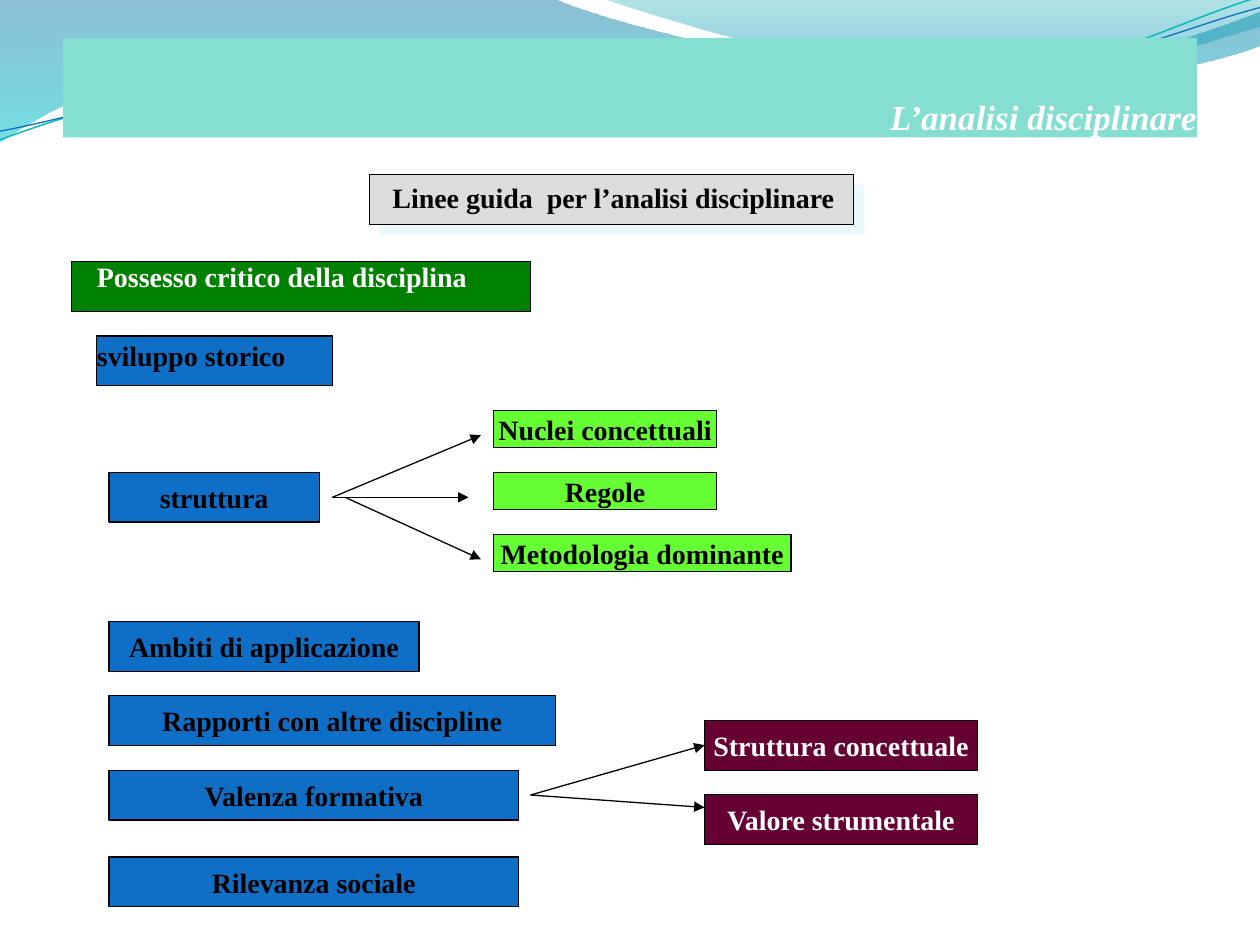
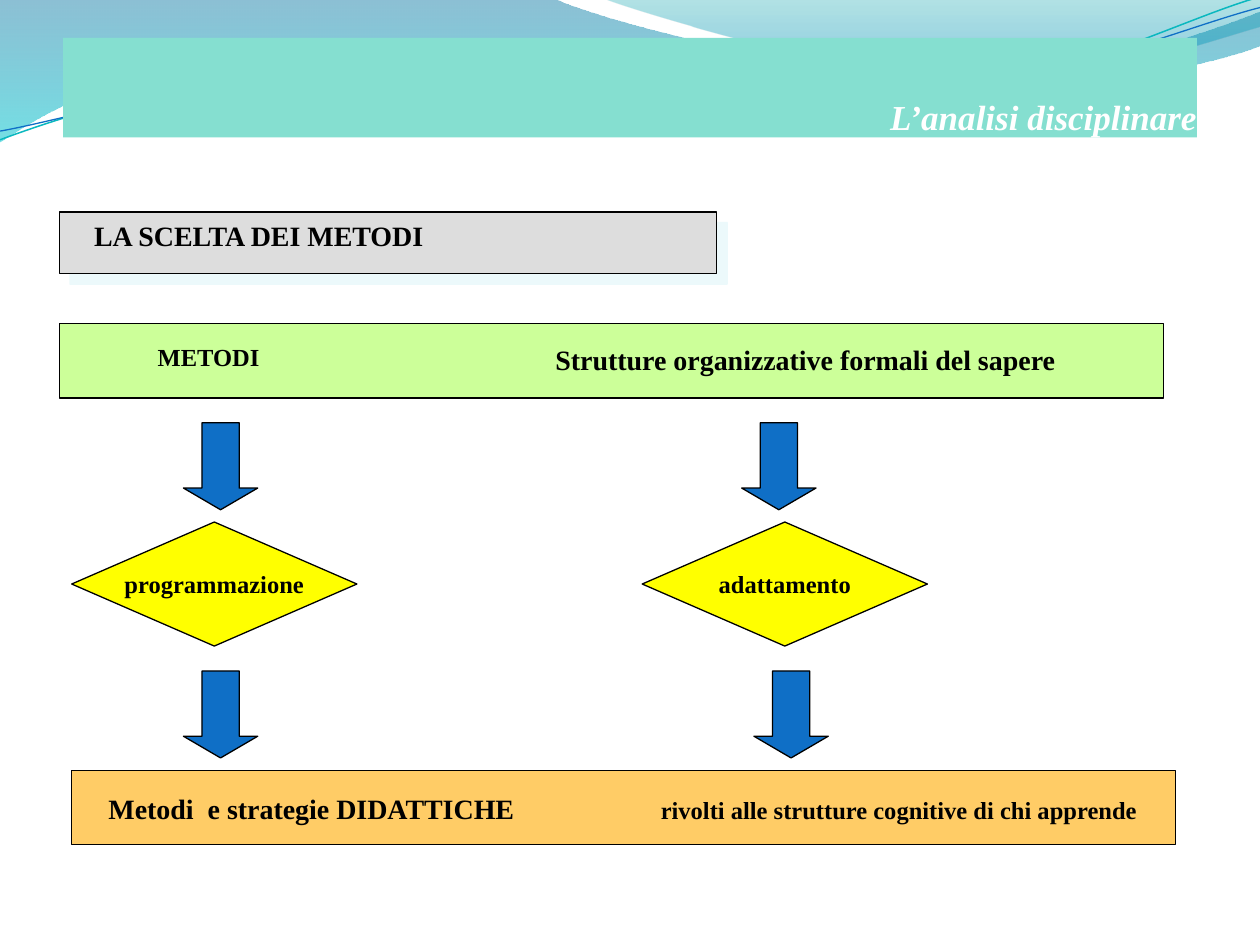
from pptx import Presentation
from pptx.dml.color import RGBColor
from pptx.enum.shapes import MSO_CONNECTOR, MSO_SHAPE
from pptx.enum.text import MSO_ANCHOR, MSO_AUTO_SIZE, PP_ALIGN
from pptx.oxml import parse_xml
from pptx.oxml.ns import nsdecls, qn
from pptx.util import Pt

RECTANGLE = MSO_SHAPE.RECTANGLE
DOWN_ARROW = MSO_SHAPE.DOWN_ARROW
DECISION = MSO_SHAPE.FLOWCHART_DECISION
STRAIGHT = MSO_CONNECTOR.STRAIGHT
LEFT, CENTER, RIGHT = PP_ALIGN.LEFT, PP_ALIGN.CENTER, PP_ALIGN.RIGHT
TOP, MIDDLE, BOTTOM = MSO_ANCHOR.TOP, MSO_ANCHOR.MIDDLE, MSO_ANCHOR.BOTTOM

FONT = "Times New Roman"
BLACK, WHITE = "000000", "FFFFFF"
BLUE, GREEN, LIME, MAROON = "0F6FC6", "008000", "66FF33", "660033"
GRAY, PALE_GREEN, YELLOW, ORANGE = "DDDDDD", "CCFF99", "FFFF00", "FFCC66"
TEAL, TITLE_BAND, SHADOW = "0AB8BF", "85DFD0", "DBF5F9"

WAVE_BANDS = [
    ((0, 0), [
        (316.8, -0.7),
        (342.7, 12.2, 478.1, 45.4, 545.8, 45.4),
        (614.2, 45.4, 689.8, 18.7, 720, 6.5),
        (720.7, 25.9),
        (707.8, 31.7, 626.4, 54.7, 537.1, 54),
        (447.8, 54, 275, 20.2, 185, 24.5),
        (92.9, 25.9, 33.1, 59.8, -0.7, 81.4),
        (0, 0),
    ], [(0, "0074A1", 45), (100, "00C6CF", 55)]),
    ((344.9, -0.7), [
        (366.5, 7.9, 491, 44.6, 553.7, 46.8),
        (616.3, 49.7, 691.9, 23, 720, 15.1),
        (720, 0),
        (344.9, -0.7),
    ], [(0, "00A1A9", 30), (80, "008BBF", 45)]),
]
WAVE_LINES = [
    ((0, 79.9), [
        (34.6, 67, 113.8, 41, 199.4, 37.4),
        (284.4, 33.8, 427, 64.1, 513.4, 57.6),
        (599.8, 51.1, 675.4, 10.8, 718.6, -1.4),
    ], TEAL, 0.85),
    ((0, 74.9), [
        (33.8, 69.1, 118.1, 43.9, 203.8, 40.3),
        (290.2, 36.7, 429.8, 60.5, 516.2, 54),
        (601.9, 48.2, 677.5, 15.1, 720, 4.3),
    ], BLUE, 0.75),
]


def color(value):
    return RGBColor.from_string(value)


def bend(outline, segments):
    corners = iter(outline.findall(qn("a:lnTo")))
    for segment in segments:
        nodes = [next(corners) for _ in range(len(segment) // 2)]
        if len(nodes) == 3:
            curve = parse_xml(f"<a:cubicBezTo {nsdecls('a')}/>")
            nodes[0].addprevious(curve)
            for node in nodes:
                curve.append(node[0])
                outline.remove(node)


def write(para, text, size=16, ink=BLACK, italic=False, align=LEFT, before=0, indent=0):
    para.alignment = align
    para.space_before = Pt(before)
    properties = para._p.get_or_add_pPr()
    properties.set("marL", "0")
    properties.set("indent", str(Pt(indent)))
    properties.append(parse_xml(f"<a:buNone {nsdecls('a')}/>"))
    span = para.add_run()
    span.text = text
    span.font.name = FONT
    span.font.size = Pt(size)
    span.font.bold = True
    span.font.italic = italic
    span.font.color.rgb = color(ink)


class Slides:
    def __init__(self):
        self.deck = Presentation()
        self.deck.slide_width = Pt(720)
        self.deck.slide_height = Pt(540)
        self.page = None

    def add_page(self):
        self.page = self.deck.slides.add_slide(self.deck.slide_layouts[1])

    def wave(self, start, segments, closed):
        points = [
            (Pt(x), Pt(y))
            for segment in segments
            for x, y in zip(segment[::2], segment[1::2])
        ]
        builder = self.page.shapes.build_freeform(*map(Pt, start), scale=1.0)
        builder.add_line_segments(points, close=closed)
        shape = builder.convert_to_shape()
        bend(shape.element.spPr.find(".//" + qn("a:path")), segments)
        shape.shadow.inherit = False
        shape.fill.background()
        shape.line.fill.background()
        tree = self.deck.slide_master.shapes.element
        shape.element.nvSpPr.cNvPr.id = 100 + len(tree)
        tree.append(shape.element)
        return shape

    def wave_band(self, start, segments, stops):
        properties = self.wave(start, segments, True).element.spPr
        marks = "".join(
            f'<a:gs pos="{position * 1000}"><a:srgbClr val="{value}">'
            f'<a:alpha val="{alpha * 1000}"/></a:srgbClr></a:gs>'
            for position, value, alpha in stops
        )
        properties.replace(properties.find(qn("a:noFill")), parse_xml(
            f"<a:gradFill {nsdecls('a')}><a:gsLst>{marks}</a:gsLst>"
            '<a:lin ang="5400000" scaled="0"/></a:gradFill>'
        ))

    def wave_line(self, start, segments, ink, width):
        shape = self.wave(start, segments, False)
        shape.line.color.rgb = color(ink)
        shape.line.width = Pt(width)

    def placeholder(self, shape, left, top, width, height, anchor):
        self.page.shapes.element.append(shape.element)
        shape.left, shape.top = Pt(left), Pt(top)
        shape.width, shape.height = Pt(width), Pt(height)
        frame = shape.text_frame
        frame.auto_size = MSO_AUTO_SIZE.NONE
        frame.vertical_anchor = anchor
        return frame

    def title(self, text):
        shape = self.page.shapes.title
        frame = self.placeholder(shape, 36, 21.6, 648, 56.9, BOTTOM)
        shape.fill.solid()
        shape.fill.fore_color.rgb = color(TITLE_BAND)
        frame.margin_left = frame.margin_right = frame.margin_bottom = 0
        frame.margin_top = Pt(3.6)
        write(frame.paragraphs[0], text, size=20, ink=WHITE, italic=True, align=RIGHT)

    def body(self, top, lines):
        frame = self.placeholder(self.page.placeholders[1], 26.6, top, 648, 356.4, TOP)
        for number, (text, style) in enumerate(lines):
            para = frame.add_paragraph() if number else frame.paragraphs[0]
            write(para, text, **style)

    def box(self, left, top, width, height, fill, text="", kind=RECTANGLE, **style):
        box = self.page.shapes.add_shape(kind, Pt(left), Pt(top), Pt(width), Pt(height))
        box.shadow.inherit = False
        box.fill.solid()
        box.fill.fore_color.rgb = color(fill)
        box.line.color.rgb = color(BLACK)
        box.line.width = Pt(0.75)
        if text:
            box.text_frame.word_wrap = False
            box.text_frame.vertical_anchor = MIDDLE
            write(box.text_frame.paragraphs[0], text, align=CENTER, **style)
        return box

    def heading_box(self, left, top, width, height):
        box = self.box(left, top, width, height, GRAY)
        box.element.spPr.find(qn("a:effectLst")).append(parse_xml(
            f"<a:outerShdw {nsdecls('a')} dist=\"{Pt(8.5)}\" dir=\"2700000\" "
            f'algn="ctr" rotWithShape="0"><a:srgbClr val="{SHADOW}">'
            '<a:alpha val="50000"/></a:srgbClr></a:outerShdw>'
        ))

    def down_arrow(self, left, top):
        arrow = self.box(left, top, 42.5, 49.7, BLUE, kind=DOWN_ARROW)
        arrow.adjustments[0] = 0.5
        arrow.adjustments[1] = 0.292

    def arrow(self, start, end):
        line = self.page.shapes.add_connector(STRAIGHT, *map(Pt, start + end))
        line.line.color.rgb = color(BLACK)
        line.line.width = Pt(0.75)
        line.line._get_or_add_ln().append(
            parse_xml(f"<a:tailEnd {nsdecls('a')} type=\"triangle\"/>"))
        line.element.spPr.append(parse_xml(f"<a:effectLst {nsdecls('a')}/>"))

    def label(self, left, top, width, height, text, **style):
        box = self.page.shapes.add_textbox(Pt(left), Pt(top), Pt(width), Pt(height))
        box.text_frame.word_wrap = True
        write(box.text_frame.paragraphs[0], text, **style)


def build_guidelines(slides):
    slides.box(55.2, 192, 134.8, 28.4, BLUE)
    slides.box(40.8, 149.5, 262.3, 28.4, GREEN)
    slides.heading_box(211, 99.8, 276.6, 28.4)
    slides.body(99.6, [
        ("Linee guida  per l’analisi disciplinare", dict(align=CENTER, before=3)),
        ("Possesso critico della disciplina", dict(ink=WHITE, before=25.8, indent=21.6)),
        ("sviluppo storico", dict(before=25.8, indent=21.6)),
    ])
    slides.title("L’analisi disciplinare")

    for top, width, text in [
        (270, 120.2, "struttura"),
        (355.2, 177.2, "Ambiti di applicazione"),
        (397.6, 255.1, "Rapporti con altre discipline"),
        (440.2, 234, "Valenza formativa"),
        (489.8, 234, "Rilevanza sociale"),
    ]:
        slides.box(62.3, top, width, 28.4, BLUE, text)
    for row, (width, text) in enumerate([
        (127.6, "Nuclei concettuali"),
        (127.6, "Regole"),
        (170, "Metodologia dominante"),
    ]):
        slides.box(282, 234.6 + 35.4 * row, width, 21.3, LIME, text)
    for row, text in enumerate(["Struttura concettuale", "Valore strumentale"]):
        slides.box(402.6, 411.8 + 42.4 * row, 156, 28.4, MAROON, text, ink=WHITE)

    for start, end in [
        ((190, 284.2), (274.8, 248.7)),
        ((190, 284.2), (267.7, 284.2)),
        ((197.2, 284.2), (274.8, 319.6)),
        ((303.2, 454.3), (402.6, 425.8)),
        ((303.2, 454.3), (402.6, 461.4)),
    ]:
        slides.arrow(start, end)


def build_methods(slides):
    slides.box(34, 184.9, 630.8, 42.5, PALE_GREEN)
    slides.heading_box(34, 121.1, 375.6, 35.3)
    slides.body(121.1, [("LA SCELTA DEI METODI", dict(before=3, indent=20))])
    slides.title("L’analisi disciplinare")
    slides.label(33.8, 192.2, 219.6, 23.8, "METODI", size=14, indent=49.2)
    slides.label(310.3, 192.2, 319, 26.6, "Strutture organizzative formali del sapere")

    for left, top in [(104.8, 241.6), (423.8, 241.6), (104.8, 383.4), (430.8, 383.4)]:
        slides.down_arrow(left, top)
    for left, text in [(41, "programmazione"), (367, "adattamento")]:
        slides.box(left, 298.3, 163, 70.9, YELLOW, text, kind=DECISION, size=14)

    slides.box(40.8, 440.1, 630.8, 42.5, ORANGE)
    slides.label(54.9, 448.6, 260, 25.6, "Metodi  e strategie DIDATTICHE")
    slides.label(370.5, 450.5, 295, 23.3,
                 "rivolti alle strutture cognitive di chi apprende", size=14)


def main():
    slides = Slides()
    slides.add_page()
    for band in WAVE_BANDS:
        slides.wave_band(*band)
    for line in WAVE_LINES:
        slides.wave_line(*line)
    build_guidelines(slides)
    slides.add_page()
    build_methods(slides)
    slides.deck.save("out.pptx")


if __name__ == "__main__":
    main()
